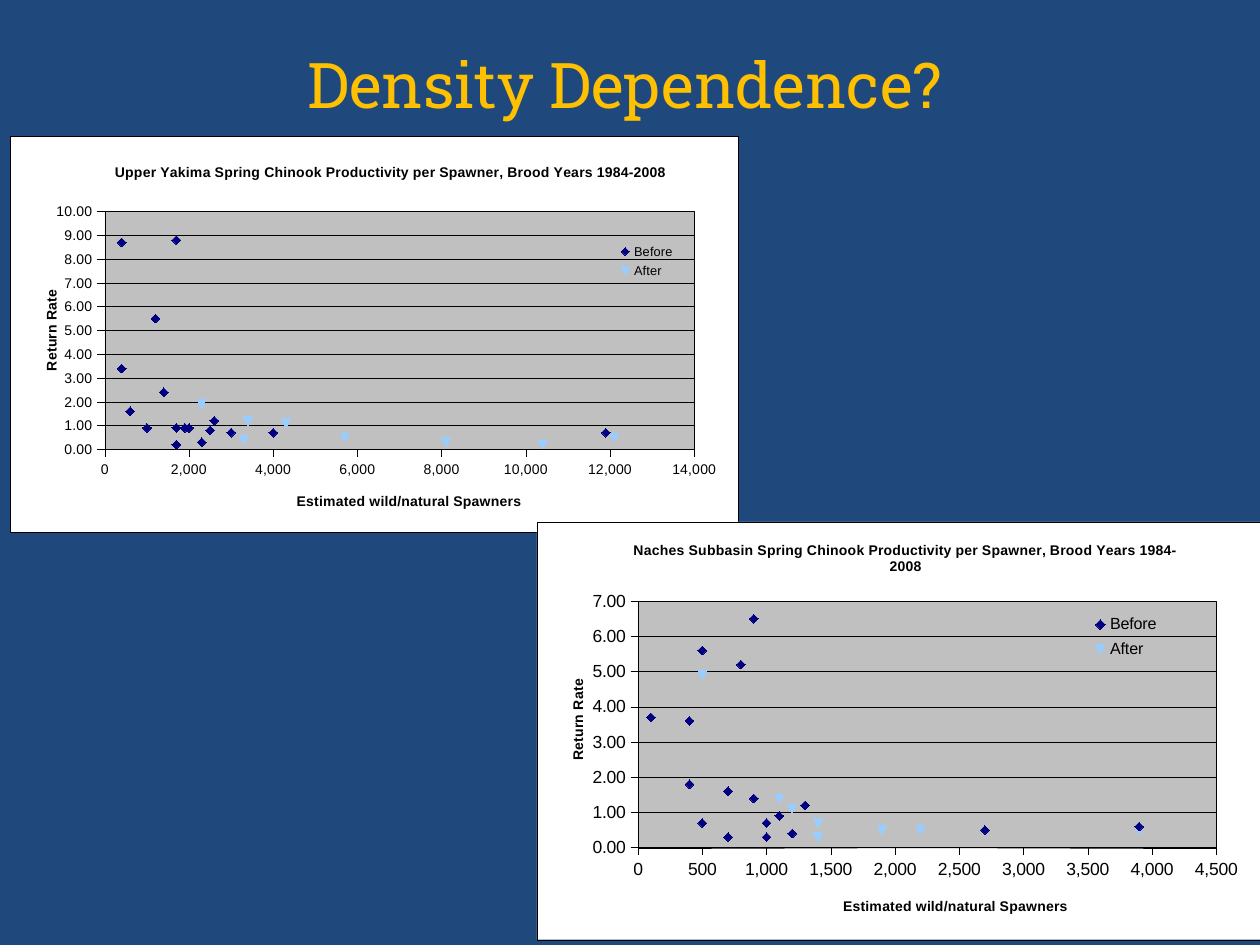
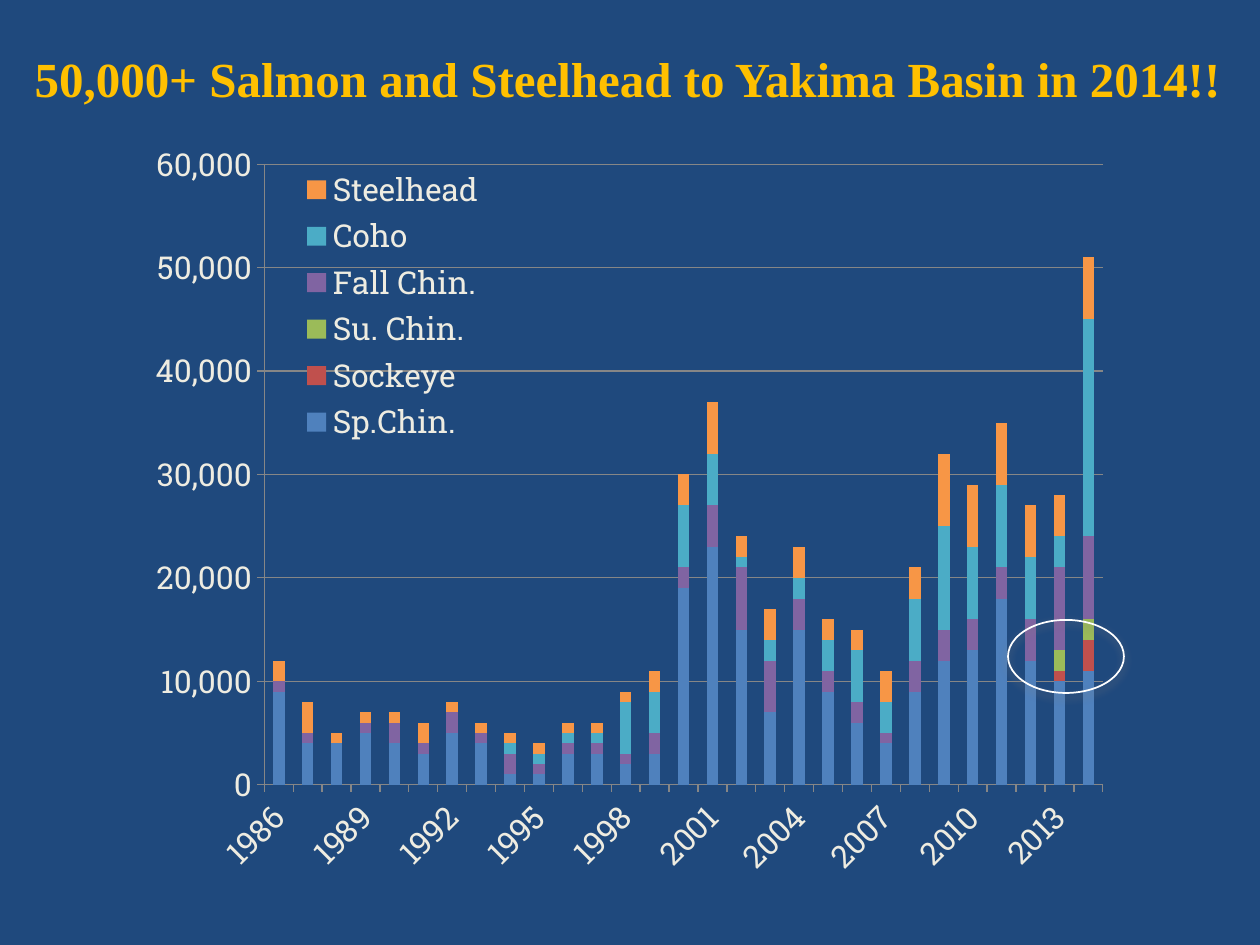
import pptx
import pptx.util
import pptx.chart.data
import pptx.dml.color
import pptx.enum.chart
import pptx.enum.shapes
import pptx.enum.text
import pptx.oxml
import pptx.oxml.ns
from pptx.util import Inches, Pt

C = pptx.enum.chart
NAVY, GOLD, WHITE, BLACK = "1F497D", "FFC000", "FFFFFF", "000000"
CREAM, GREY, SILVER = "EEECE1", "868686", "C0C0C0"
BEFORE, AFTER = "000080", "99CCFF"
SLAB, ARIAL, TIMES = "Roboto Slab", "Arial", "Times New Roman"
NS = pptx.oxml.ns.nsdecls("c", "a")
qn = pptx.oxml.ns.qn


# Shared helpers
def rgb(value):
    return pptx.dml.color.RGBColor.from_string(value)


def style_font(font, color, **formats):
    for name, value in formats.items():
        setattr(font, name, value)
    font.color.rgb = rgb(color)


def style_line(line, color, width):
    line.color.rgb = rgb(color)
    line.width = Pt(width)


def fill_solid(fill, color):
    fill.solid()
    fill.fore_color.rgb = rgb(color)


def panel_xml(fill, line):
    return pptx.oxml.parse_xml(
        f'<c:spPr {NS}><a:solidFill><a:srgbClr val="{fill}"/></a:solidFill>'
        f'<a:ln w="{Pt(0.25)}"><a:solidFill><a:srgbClr val="{line}"/>'
        '</a:solidFill></a:ln></c:spPr>')


def place(element, index, **lengths):
    """Give a chart part a fixed place, as shares of the chart box."""
    old = element.find(qn("c:layout"))
    if old is not None:
        element.remove(old)
    target = '<c:layoutTarget val="inner"/>' if index == 0 else ""
    modes = "".join(f'<c:{k}Mode val="edge"/>' for k in "xy")
    sizes = "".join(f'<c:{k} val="{v}"/>' for k, v in lengths.items())
    element.insert(index, pptx.oxml.parse_xml(
        f"<c:layout {NS}><c:manualLayout>{target}{modes}{sizes}"
        "</c:manualLayout></c:layout>"))


def place_plot(chart, x, y, w, h):
    plot_area = chart._chartSpace.chart.plotArea
    place(plot_area, 0, x=x, y=y, w=w, h=h)
    return plot_area


def add_legend(chart, position, box, color, size, font):
    chart.has_legend = True
    legend = chart.legend
    legend.position = position
    legend.include_in_layout = True
    style_font(legend.font, color, size=Pt(size), name=font)
    place(legend._element, 1, **dict(zip("xywh", box)))


def add_chart_title(owner, text, x, y):
    """Title of a chart or of an axis."""
    title = owner
    tf = title.text_frame
    tf.text = text
    style_font(tf.paragraphs[0].runs[0].font, BLACK,
               size=Pt(8), bold=True, name=ARIAL)
    place(title._element, 1, x=x, y=y)


def style_axis(axis, size, font, color, line, width, number_format, top=None, step=None):
    axis.major_tick_mark = C.XL_TICK_MARK.OUTSIDE
    axis.minor_tick_mark = C.XL_TICK_MARK.NONE
    style_line(axis.format.line, line, width)
    labels = axis.tick_labels
    style_font(labels.font, color, size=Pt(size), name=font, bold=False)
    labels.number_format = number_format
    labels.number_format_is_linked = False
    if top:
        axis.minimum_scale, axis.maximum_scale, axis.major_unit = 0, top, step


def new_slide(prs, title, box, **formats):
    s = prs.slides.add_slide(prs.slide_layouts[5])
    fill_solid(s.background.fill, NAVY)
    sp = s.shapes.title
    sp.left, sp.top, sp.width, sp.height = (Inches(v) for v in box)
    tf = sp.text_frame
    tf.margin_left = tf.margin_right = 0
    tf.word_wrap = True
    tf.vertical_anchor = pptx.enum.text.MSO_ANCHOR.MIDDLE
    p = tf.paragraphs[0]
    p.alignment = pptx.enum.text.PP_ALIGN.CENTER
    r = p.add_run()
    r.text = title
    style_font(r.font, GOLD, **formats)
    return s


# Scatter of return rate against spawners
def productivity_chart(s, box, basin, points, size, x_scale, y_scale, plot,
                       legend, title_at, x_title_at, y_title_at):
    data = pptx.chart.data.XyChartData()
    for name, pairs in points.items():
        series = data.add_series(name)
        for x, y in pairs:
            series.add_data_point(x, y)
    chart = s.shapes.add_chart(C.XL_CHART_TYPE.XY_SCATTER,
                               *(Inches(v) for v in box), data).chart
    style_font(chart.font, BLACK, size=Pt(size), name=ARIAL)

    for series, color in zip(chart.plots[0].series, (BEFORE, AFTER)):
        series.format.line.fill.background()
        series.marker.size = 5
        fill_solid(series.marker.format.fill, color)
        style_line(series.marker.format.line, color, 0.75)
    chart.plots[0].series[0].marker.style = C.XL_MARKER_STYLE.DIAMOND

    across, up = chart.category_axis, chart.value_axis
    style_axis(across, size, ARIAL, BLACK, BLACK, 0.25, "#,##0", *x_scale)
    style_axis(up, size, ARIAL, BLACK, BLACK, 0.25, "0.00", *y_scale)
    across.has_major_gridlines = False
    style_line(up.major_gridlines.format.line, BLACK, 0.25)
    chart.has_title = True
    add_chart_title(chart.chart_title,
                    f"{basin} Spring Chinook Productivity per Spawner, "
                    "Brood Years 1984-2008", *title_at)
    add_chart_title(across.axis_title, "Estimated wild/natural Spawners", *x_title_at)
    add_chart_title(up.axis_title, "Return Rate", *y_title_at)
    add_legend(chart, C.XL_LEGEND_POSITION.RIGHT, legend, BLACK, size * 0.92, ARIAL)

    place_plot(chart, *plot).append(panel_xml(SILVER, BLACK))
    chart._chartSpace.chart.addnext(panel_xml(WHITE, BLACK))


def density_slide(prs):
    s = new_slide(prs, "Density Dependence?", (0, 0.25, 9.92, 0.83),
                  size=Pt(36), name=SLAB, bold=False)
    productivity_chart(
        s, (0.08, 1.08, 5.78, 3.15), "Upper Yakima",
        {"Before": [(1700, 0.9), (2600, 1.2), (4000, 0.7), (2000, 0.9), (1400, 2.4),
                    (2500, 0.8), (2300, 0.3), (1700, 0.2), (3000, 0.7), (1900, 0.9),
                    (600, 1.6), (400, 3.4), (1700, 8.8), (1200, 5.5), (400, 8.7),
                    (1000, 0.9), (11900, 0.7)],
         "After": [(12100, 0.5), (8100, 0.3), (3300, 0.4), (10400, 0.2),
                   (5700, 0.5), (3400, 1.2), (2300, 1.9), (4300, 1.1)]},
        8, (14000, 2000), (10, 1), plot=(0.13, 0.19, 0.81, 0.6),
        legend=(0.82, 0.26, 0.11, 0.11), title_at=(0.14, 0.06),
        x_title_at=(0.39, 0.89), y_title_at=(0.04, 0.38))
    productivity_chart(
        s, (4.26, 4.14, 5.74, 3.32), "Naches Subbasin",
        {"Before": [(400, 3.6), (700, 1.6), (2700, 0.5), (1200, 0.4), (1300, 1.2),
                    (1000, 0.7), (1000, 0.3), (700, 0.3), (1400 - 500, 1.4),
                    (1100, 0.9), (500, 0.7), (100, 3.7), (900, 6.5), (800, 5.2),
                    (500, 5.6), (400, 1.8), (3900, 0.6)],
         "After": [(3900, 0.5), (1900, 0.5), (1400, 0.3), (2200, 0.5),
                   (1400, 0.7), (1200, 1.1), (500, 4.9), (1100, 1.4)]},
        10, (4500, 500), (7, 1), plot=(0.14, 0.19, 0.8, 0.59),
        legend=(0.75, 0.21, 0.13, 0.13), title_at=(0.13, 0.04),
        x_title_at=(0.42, 0.89), y_title_at=(0.04, 0.37))


# Stacked yearly returns, in thousands of fish
RETURNS = {
    "Sp.Chin.": ("4F81BD", [9, 4, 4, 5, 4, 3, 5, 4, 1, 1, 3, 3, 2, 3, 19, 23, 15, 7, 15,
                            9, 6, 4, 9, 12, 13, 18, 12, 10, 11]),
    "Sockeye": ("C0504D", [None] * 27 + [1, 3]),
    "Su. Chin.": ("9BBB59", [None] * 26 + [0, 2, 2]),
    "Fall Chin.": ("8064A2", [1, 1, 0, 1, 2, 1, 2, 1, 2, 1, 1, 1, 1, 2, 2, 4, 6, 5, 3, 2,
                              2, 1, 3, 3, 3, 3, 4, 8, 8]),
    "Coho": ("4BACC6", [0] * 8 + [1, 1, 1, 1, 5, 4, 6, 5, 1, 2, 2, 3, 5, 3, 6, 10, 7, 8,
                                  6, 3, 21]),
    "Steelhead": ("F79646", [2, 3, 1, 1, 1, 2, 1, 1, 1, 1, 1, 1, 1, 2, 3, 5, 2, 3, 3, 2,
                             2, 3, 3, 7, 6, 6, 5, 4, 6]),
}


def returns_chart(s, box):
    data = pptx.chart.data.CategoryChartData(number_format="#,##0")
    data.categories = [str(year) for year in range(1986, 2015)]
    for name, (_, thousands) in RETURNS.items():
        data.add_series(name, [None if v is None else v * 1000 for v in thousands])
    chart = s.shapes.add_chart(C.XL_CHART_TYPE.COLUMN_STACKED,
                               *(Inches(v) for v in box), data).chart
    chart.has_title = False
    style_font(chart.font, BLACK, size=Pt(18), name=SLAB)

    plot = chart.plots[0]
    plot.gap_width, plot.overlap, plot.vary_by_categories = 150, 100, False
    for series, (color, _) in zip(plot.series, RETURNS.values()):
        fill_solid(series.format.fill, color)
    years, fish = chart.category_axis, chart.value_axis
    style_axis(years, 18, SLAB, CREAM, GREY, 0.75, "General")
    style_axis(fish, 18, SLAB, CREAM, GREY, 0.75, "#,##0", 60000, 10000)
    style_line(fish.major_gridlines.format.line, GREY, 0.75)

    # Every third year, slanted
    axis = years._element
    axis.find(qn("c:txPr")).find(qn("a:bodyPr")).set("rot", "-2700000")
    axis.find(qn("c:noMultiLvlLbl")).addprevious(
        pptx.oxml.parse_xml(f'<c:tickLblSkip {NS} val="3"/>'))
    add_legend(chart, C.XL_LEGEND_POSITION.LEFT, (0.16, 0.05, 0.2, 0.37), CREAM, 18, SLAB)
    place_plot(chart, 0.13, 0.05, 0.85, 0.81)


def highlight_ring(s, box):
    sp = s.shapes.add_shape(pptx.enum.shapes.MSO_SHAPE.OVAL, *(Inches(v) for v in box))
    sp.fill.background()
    style_line(sp.line, WHITE, 1)
    sp.shadow.inherit = False
    effects = sp._element.spPr.find(qn("a:effectLst"))
    effects.append(pptx.oxml.parse_xml(
        f'<a:outerShdw {NS} blurRad="{Pt(5)}" dist="{Pt(2)}" dir="5400000">'
        '<a:srgbClr val="808080"><a:alpha val="75000"/></a:srgbClr></a:outerShdw>'))


def returns_slide(prs):
    s = new_slide(prs, "50,000+ Salmon and Steelhead to Yakima Basin in 2014!!",
                  (0.12, 0.33, 9.72, 0.57), size=Pt(28), name=TIMES, bold=True)
    returns_chart(s, (1.08, 1, 7.83, 6.08))
    highlight_ring(s, (8, 4.92, 0.92, 0.58))


def main():
    prs = pptx.Presentation()
    prs.slide_width, prs.slide_height = Inches(10), Inches(7.5)
    density_slide(prs)
    returns_slide(prs)
    prs.save("out.pptx")


if __name__ == "__main__":
    main()
